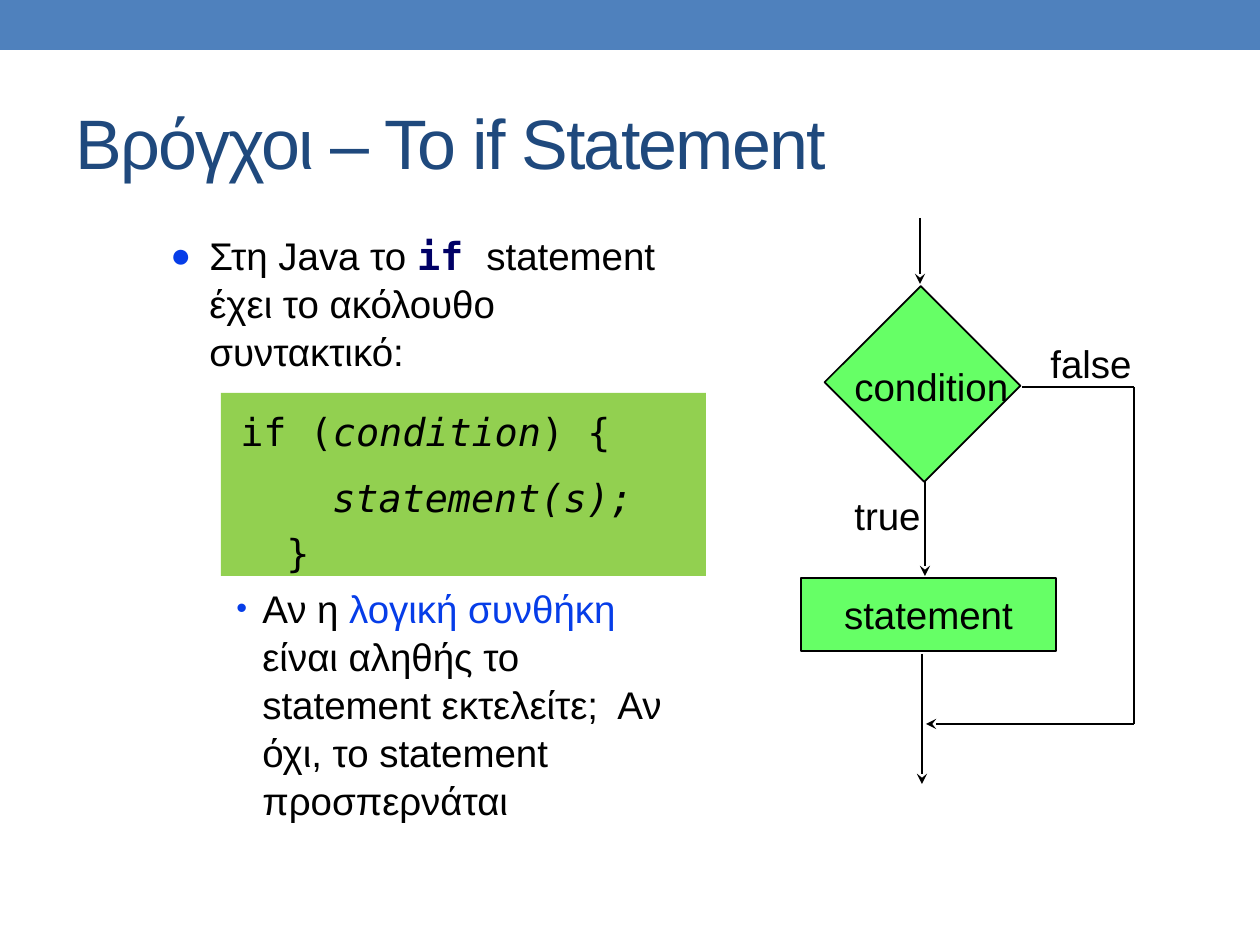
"""Build a slide on the Java if statement with its flowchart."""
from dataclasses import dataclass
from typing import Optional

import pptx
import pptx.dml.color
import pptx.enum.shapes
import pptx.enum.text
import pptx.oxml.ns
import pptx.util
from lxml import etree

SCALE = 914400 / 126
ARIAL, MONO = "Arial", "DejaVu Sans Mono"
COLORS = {
    "band": "4F81BD", "panel": "92D050", "node": "66FF66", "ink": "000000",
    "title": "1F497D", "key": "000066", "blue": "063DE8",
}
ANCHOR = pptx.enum.text.MSO_ANCHOR
ALIGN = pptx.enum.text.PP_ALIGN


@dataclass
class Run:
    text: str
    color: str = "ink"
    font: str = ARIAL
    size: int = 22
    bold: bool = False
    slant: bool = False
    space: int = 0


@dataclass
class Para:
    runs: list[Run]
    left: int = 0
    hang: int = 0
    before: float = 0
    after: float = 0
    mark: str = ""
    ratio: int = 100
    lead: float = 1.0


@dataclass
class Block:
    x: int
    y: int
    w: int
    h: int
    fill: str
    edge: bool = False
    turn: int = 0
    label: str = ""


@dataclass
class Label:
    x: int
    y: int
    w: int
    h: int
    paras: list[Para]
    wrap: bool = False
    anchor: Optional[ANCHOR] = None


@dataclass
class Line:
    x1: int
    y1: int
    x2: int
    y2: int
    arrow: bool = True


def px(n: int) -> pptx.util.Emu:
    """Turn pixels into EMU."""
    return pptx.util.Emu(round(n * SCALE))


def rgb(name: str) -> pptx.dml.color.RGBColor:
    """Look up a named colour."""
    return pptx.dml.color.RGBColor.from_string(COLORS[name])


def sub(parent, tag: str, **attrs: str):
    """Append a DrawingML element."""
    return etree.SubElement(parent, pptx.oxml.ns.qn(tag), attrs)


def write(para, data: Para) -> None:
    """Fill a paragraph run by run."""
    para.space_before = pptx.util.Pt(data.before)
    para.space_after = pptx.util.Pt(data.after)
    para.line_spacing = data.lead
    props = para._p.get_or_add_pPr()
    props.set("marL", str(px(data.left)))
    props.set("indent", str(px(-data.hang)))
    if data.mark:
        tint = sub(props, "a:buClr")
        sub(tint, "a:srgbClr", val=COLORS["blue"])
        sub(props, "a:buSzPct", val=str(data.ratio * 1000))
        sub(props, "a:buFont", typeface=ARIAL)
        sub(props, "a:buChar", char=data.mark)
    for item in data.runs:
        run = para.add_run()
        run.text = item.text
        font = run.font
        font.name, font.size = item.font, pptx.util.Pt(item.size)
        font.bold, font.italic = item.bold, item.slant
        font.color.rgb = rgb(item.color)
        if item.space:
            run._r.get_or_add_rPr().set("spc", str(item.space))


def draw_block(slide, data: Block) -> None:
    """Draw a filled rectangle."""
    kind = pptx.enum.shapes.MSO_SHAPE.RECTANGLE
    shape = slide.shapes.add_shape(kind, *map(px, (data.x, data.y, data.w, data.h)))
    shape.shadow.inherit = False
    shape.rotation = data.turn
    shape.fill.solid()
    shape.fill.fore_color.rgb = rgb(data.fill)
    if data.edge:
        shape.line.color.rgb = rgb("ink")
        shape.line.width = pptx.util.Pt(1)
    else:
        shape.line.fill.background()
    if data.label:
        frame = shape.text_frame
        frame.word_wrap = False
        frame.vertical_anchor = ANCHOR.MIDDLE
        para = frame.paragraphs[0]
        write(para, Para([Run(data.label)]))
        para.alignment = ALIGN.CENTER


def draw_label(slide, data: Label) -> None:
    """Draw a text box."""
    box = slide.shapes.add_textbox(*map(px, (data.x, data.y, data.w, data.h)))
    frame = box.text_frame
    frame.word_wrap = data.wrap
    if not data.wrap:
        frame.auto_size = pptx.enum.text.MSO_AUTO_SIZE.SHAPE_TO_FIT_TEXT
    if data.anchor is not None:
        frame.vertical_anchor = data.anchor
    for i, item in enumerate(data.paras):
        write(frame.add_paragraph() if i else frame.paragraphs[0], item)


def draw_line(slide, data: Line) -> None:
    """Draw a straight line, with an arrowhead if wanted."""
    kind = pptx.enum.shapes.MSO_CONNECTOR.STRAIGHT
    ends = map(px, (data.x1, data.y1, data.x2, data.y2))
    line = slide.shapes.add_connector(kind, *ends)
    line.line.color.rgb = rgb("ink")
    line.line.width = pptx.util.Pt(1)
    if data.arrow:
        sub(line.line._get_or_add_ln(), "a:tailEnd", type="stealth")
    sub(line._element.spPr, "a:effectLst")


TITLE = Para([Run("Βρόγχοι – Το if Statement", "title", size=40, space=-100)])
BODY = [
    Para([Run("Στη Java το "), Run("if ", "key", MONO, bold=True),
          Run("statement έχει το ακόλουθο συντακτικό:")],
         39, 39, 4.4, mark="●", ratio=90, lead=1.04),
    Para([Run("if (", font=MONO), Run("condition", font=MONO, slant=True),
          Run(") {", font=MONO)], 70, 0, 18.5, 5.5, lead=1.04),
    Para([Run("statement(s);", font=MONO, slant=True)], 162, 0, 4.4, lead=1.04),
    Para([Run("}", font=MONO)], 116, 0, 4.4, lead=1.04),
    Para([Run("Αν η "), Run("λογική συνθήκη ", "blue"),
          Run("είναι αληθής το statement εκτελείτε;  Αν όχι, "
              "το statement προσπερνάται")],
         92, 26, 4.4, mark="•", ratio=80, lead=1.04),
]
ITEMS = [
    Block(0, 0, 1260, 50, "band"),
    Block(221, 393, 485, 183, "panel"),
    Label(158, 224, 552, 658, BODY, True),
    Label(63, 73, 1134, 136, [TITLE], True, ANCHOR.MIDDLE),
    Block(801, 578, 255, 73, "node", True, label="statement"),
    Block(852, 316, 141, 136, "node", True, 45),
    Label(842, 357, 181, 59, [Para([Run("condition")])]),
    Line(920, 218, 920, 284),
    Line(1022, 387, 1134, 387, False),
    Line(922, 654, 922, 784),
    Line(925, 481, 925, 576),
    Line(1134, 387, 1134, 724, False),
    Line(1134, 724, 926, 724),
    Label(1038, 334, 108, 59, [Para([Run("false")])]),
    Label(842, 486, 93, 59, [Para([Run("true")])]),
]
DRAW = {Block: draw_block, Label: draw_label, Line: draw_line}


def main() -> None:
    """Build and save the deck."""
    deck = pptx.Presentation()
    deck.slide_width, deck.slide_height = px(1260), px(945)
    slide = deck.slides.add_slide(deck.slide_layouts[6])
    for item in ITEMS:
        DRAW[type(item)](slide, item)
    deck.save("out.pptx")


if __name__ == "__main__":
    main()
